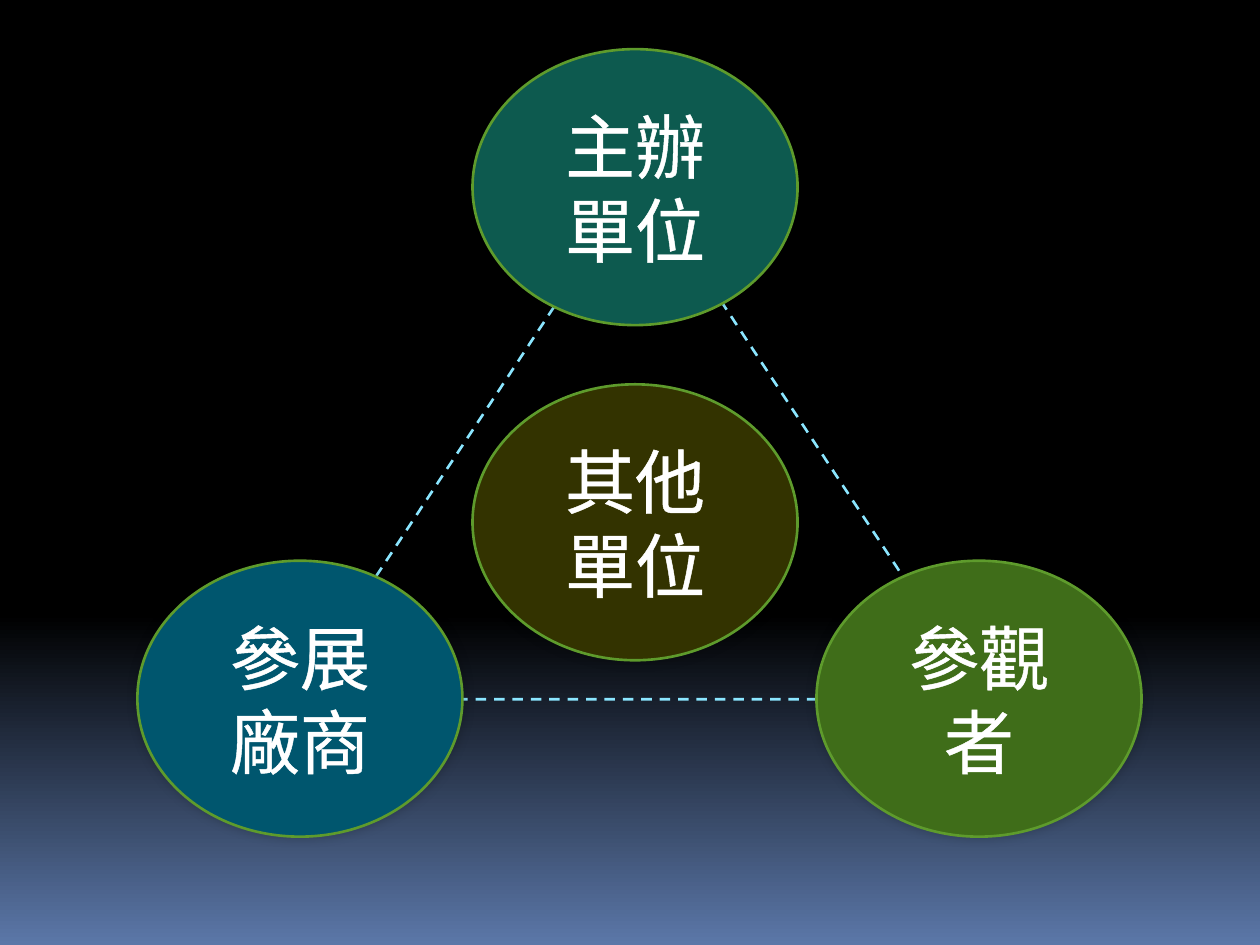
from copy import deepcopy

from lxml.etree import SubElement
from pptx import Presentation
from pptx.dml.color import RGBColor
from pptx.enum.dml import MSO_LINE
from pptx.enum.shapes import MSO_SHAPE
from pptx.enum.text import MSO_ANCHOR, PP_ALIGN
from pptx.oxml.ns import qn
from pptx.util import Inches, Pt

THEME = {
    "font": "Calibri",
    "size": 40,
    "text": "FFFFFF",
    "text_outline": 1.45,
    "line_width": 1.5,
    "ellipse_line": "5E9B2C",
    "triangle_line": "8BE6FF",
    "shadow": "000000",
    "background": [(0, "000000"), (0.65, "000000"), (1, "5B77A8")],
}

TRIANGLE = (2.34, 1.41, 5.47, 4.14)
ELLIPSE_SIZE = (2.58, 2.19)
PARTIES = [  # text, fill, left, top
    ("參展廠商", "00566E", 1.09, 4.45),
    ("參觀者", "3F6D19", 6.48, 4.45),
    ("主辦單位", "0D5A4F", 3.75, 0.39),
    ("其他單位", "333300", 3.75, 3.05),
]


def color(name):
    return RGBColor.from_string(THEME[name])


def paint_background(slide):
    fill = slide.background.fill
    fill.gradient()
    fill.gradient_angle = 270  # counter-clockwise: runs from top to bottom
    stop_list = slide.background._cSld.find(".//" + qn("a:gsLst"))
    stop_list.append(deepcopy(stop_list[-1]))
    for stop, (position, value) in zip(fill.gradient_stops, THEME["background"]):
        stop.position = position
        stop.color.rgb = RGBColor.from_string(value)


def add_outlined_shape(slide, kind, box, line_color):
    shape = slide.shapes.add_shape(kind, *map(Inches, box))
    shape.shadow.inherit = False
    shape.line.color.rgb = color(line_color)
    shape.line.width = Pt(THEME["line_width"])
    return shape


def add_soft_shadow(shape):
    effects = shape._element.spPr.find(qn("a:effectLst"))
    shadow = SubElement(effects, qn("a:outerShdw"), blurRad=str(Pt(6)), dist="0",
                        dir=str(315 * 60000), rotWithShape="0")
    shade = SubElement(shadow, qn("a:srgbClr"), val=THEME["shadow"])
    SubElement(shade, qn("a:alpha"), val="20000")


def outline_text(run):
    properties = run._r.get_or_add_rPr()
    outline = SubElement(properties, qn("a:ln"), w=str(Pt(THEME["text_outline"])))
    properties.insert(0, outline)
    fill = SubElement(outline, qn("a:solidFill"))
    SubElement(fill, qn("a:srgbClr"), val=THEME["text"])


def add_party(slide, text, fill, left, top):
    ellipse = add_outlined_shape(slide, MSO_SHAPE.OVAL, (left, top, *ELLIPSE_SIZE), "ellipse_line")
    ellipse.fill.solid()
    ellipse.fill.fore_color.rgb = RGBColor.from_string(fill)
    add_soft_shadow(ellipse)

    frame = ellipse.text_frame
    frame.word_wrap = True
    frame.vertical_anchor = MSO_ANCHOR.MIDDLE
    paragraph = frame.paragraphs[0]
    paragraph.alignment = PP_ALIGN.CENTER
    paragraph.font.name = THEME["font"]
    paragraph.font.size = Pt(THEME["size"])
    paragraph.font.color.rgb = color("text")
    run = paragraph.add_run()
    run.text = text
    outline_text(run)


def main():
    presentation = Presentation()
    presentation.slide_width, presentation.slide_height = Inches(10), Inches(7.5)
    slide = presentation.slides.add_slide(presentation.slide_layouts[6])
    paint_background(slide)

    triangle = add_outlined_shape(slide, MSO_SHAPE.ISOSCELES_TRIANGLE, TRIANGLE, "triangle_line")
    triangle.fill.background()
    triangle.line.dash_style = MSO_LINE.DASH

    for party in PARTIES:
        add_party(slide, *party)
    presentation.save("out.pptx")


if __name__ == "__main__":
    main()
